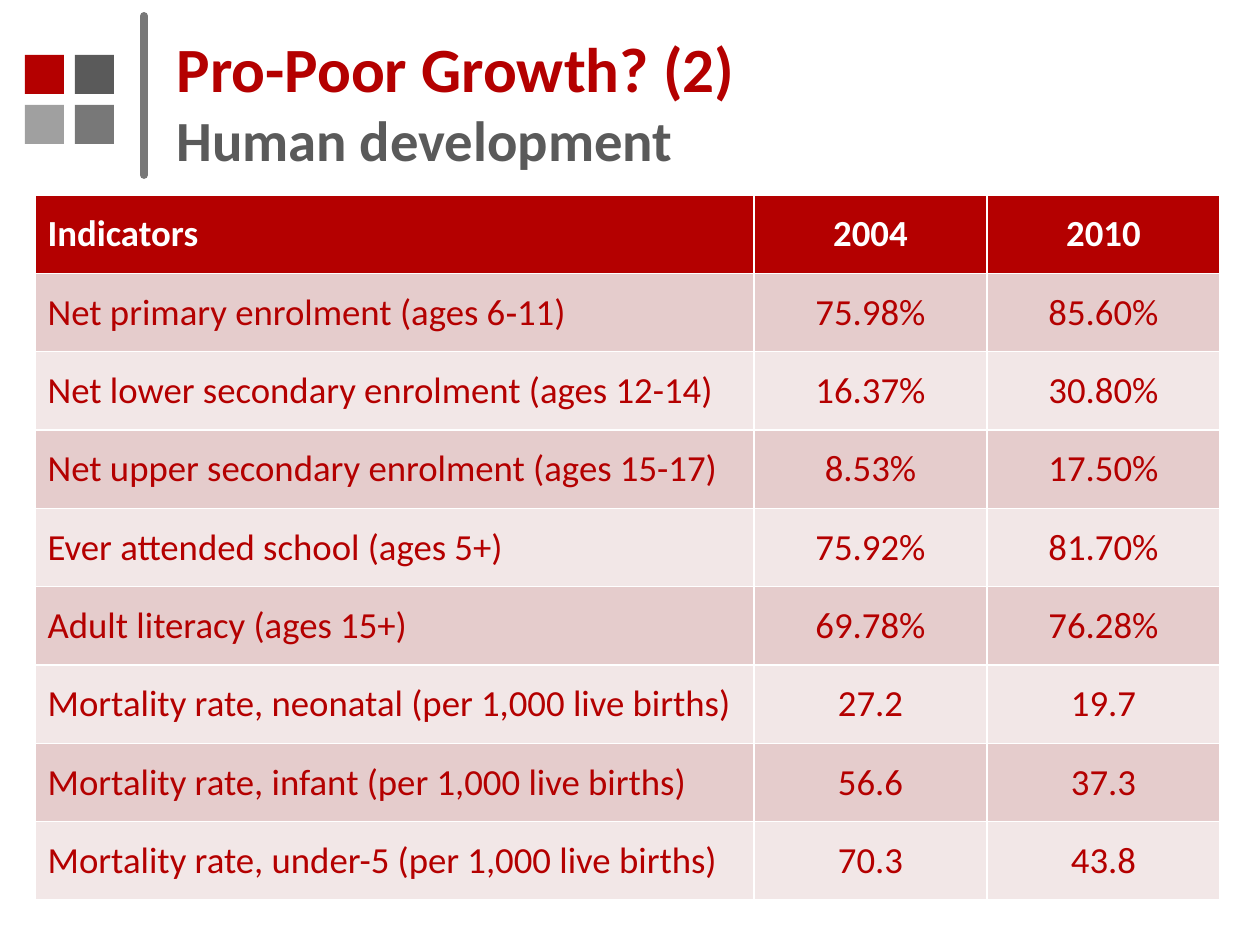
import pptx
import pptx.util
import pptx.dml.color
import pptx.enum.shapes
import pptx.enum.text
import pptx.oxml.ns
import lxml.etree

theme = {
    "face": "Calibri",
    "red": "B40000", "dark": "5A5A5A", "mid": "787878", "light": "A0A0A0",
    "white": "FFFFFF", "odd": "E5CCCC", "even": "F2E7E7",
    "head": 36, "sub": 32.4, "cell": 21, "rule": 4.5,
}
rows = [
    ("Indicators", "2004", "2010"),
    ("Net primary enrolment (ages 6‐11)", "75.98%", "85.60%"),
    ("Net lower secondary enrolment (ages 12-14)", "16.37%", "30.80%"),
    ("Net upper secondary enrolment (ages 15-17)", "8.53%", "17.50%"),
    ("Ever attended school (ages 5+)", "75.92%", "81.70%"),
    ("Adult literacy (ages 15+)", "69.78%", "76.28%"),
    ("Mortality rate, neonatal (per 1,000 live births)", "27.2", "19.7"),
    ("Mortality rate, infant (per 1,000 live births)", "56.6", "37.3"),
    ("Mortality rate, under-5 (per 1,000 live births)", "70.3", "43.8"),
]
scale = 914400 / 126
qn = pptx.oxml.ns.qn
align = pptx.enum.text.PP_ALIGN
middle = pptx.enum.text.MSO_ANCHOR.MIDDLE


def px(*nums):
    return [round(num * scale) for num in nums]


def style(run, size, tint, bold):
    form = {"name": theme["face"], "size": pptx.util.Pt(theme[size]), "bold": bold}
    for key, val in form.items():
        setattr(run.font, key, val)
    run.font.color.rgb = pptx.dml.color.RGBColor.from_string(theme[tint])


deck = pptx.Presentation()
deck.slide_width, deck.slide_height = px(1260, 945)
slide = deck.slides.add_slide(deck.slide_layouts[5])
shapes = slide.shapes

for num, tint in enumerate(("red", "dark", "light", "mid")):
    row, col = divmod(num, 2)
    box = shapes.add_shape(pptx.enum.shapes.MSO_SHAPE.RECTANGLE,
                           *px(25 + 50 * col, 55 + 50 * row, 39, 39))
    box.shadow.inherit = False
    box.fill.solid()
    box.fill.fore_color.rgb = pptx.dml.color.RGBColor.from_string(theme[tint])
    box.line.fill.background()

rule = shapes.add_connector(pptx.enum.shapes.MSO_CONNECTOR.STRAIGHT, *px(144, 16, 144, 175))
rule.line.width = pptx.util.Pt(theme["rule"])
rule.line.color.rgb = pptx.dml.color.RGBColor.from_string(theme["mid"])
rule.line._get_or_add_ln().set("cap", "rnd")
lxml.etree.SubElement(rule._element.spPr, qn("a:effectLst"))

title = shapes.title
for key, val in zip(("left", "top", "width", "height"), px(164, 37, 1003, 129)):
    setattr(title, key, val)
title.text_frame.vertical_anchor = middle
para = title.text_frame.paragraphs[0]
para.alignment = align.LEFT
for text, size, tint in (("Pro-Poor Growth? (2)", "head", "red"),
                         ("Human development", "sub", "dark")):
    if para.runs:
        para.add_line_break()
        gap = lxml.etree.SubElement(para._p.find(qn("a:br")), qn("a:rPr"))
        gap.set("sz", str(theme["head"] * 100))
    run = para.add_run()
    run.text = text
    style(run, size, tint, True)

grid = shapes.add_table(len(rows), 3, *px(35, 195, 1185, 705)).table
for col, width in zip(grid.columns, px(719, 233, 233)):
    col.width = width
for i, row in enumerate(rows):
    back = "red" if i == 0 else "odd" if i % 2 else "even"
    for j, text in enumerate(row):
        cell = grid.cell(i, j)
        cell.fill.solid()
        cell.fill.fore_color.rgb = pptx.dml.color.RGBColor.from_string(theme[back])
        cell.vertical_anchor = middle
        para = cell.text_frame.paragraphs[0]
        para.alignment = align.CENTER if j else align.LEFT
        run = para.add_run()
        run.text = text
        style(run, "cell", "red" if i else "white", i == 0)

deck.save("out.pptx")
